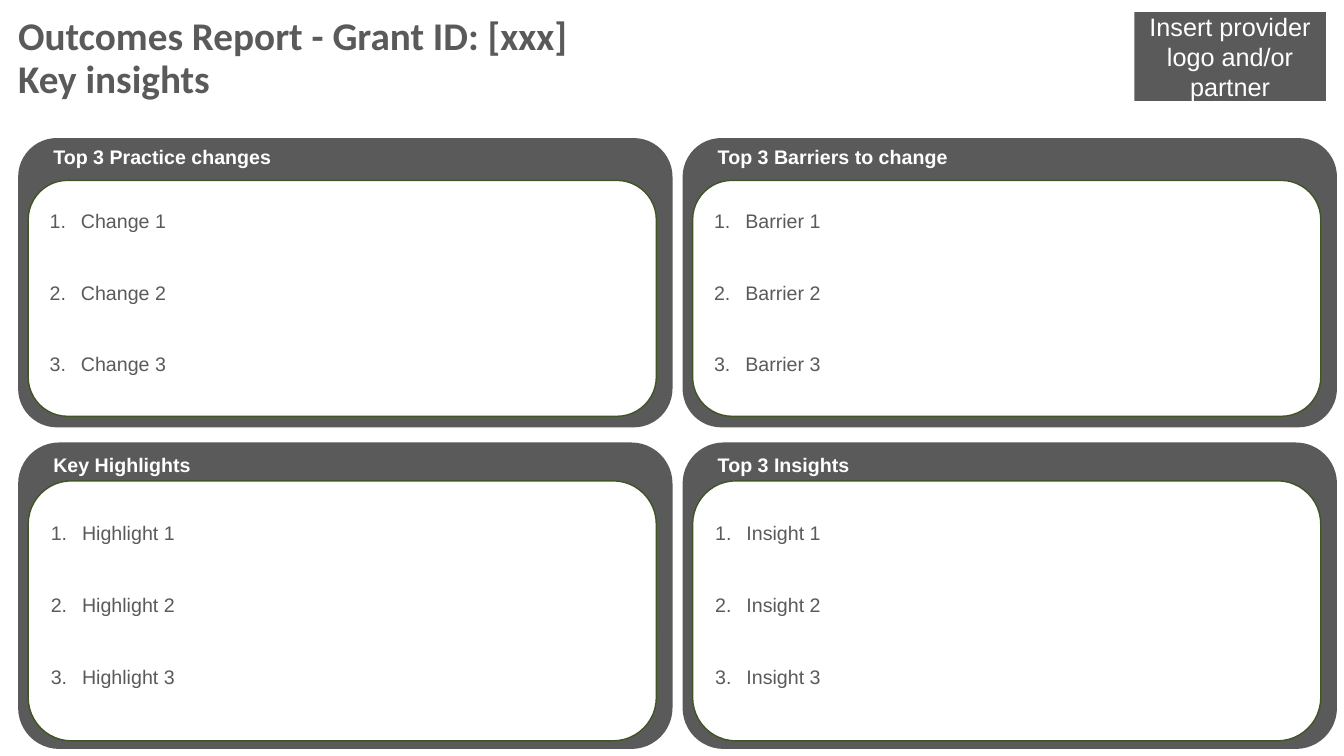
from lxml import etree
from pptx import Presentation
from pptx.dml.color import RGBColor
from pptx.enum.shapes import MSO_SHAPE
from pptx.enum.text import MSO_ANCHOR, MSO_AUTO_SIZE, PP_ALIGN
from pptx.oxml.ns import qn
from pptx.util import Inches, Pt

RECT, ROUNDED = MSO_SHAPE.RECTANGLE, MSO_SHAPE.ROUNDED_RECTANGLE
MIDDLE, BOTTOM = MSO_ANCHOR.MIDDLE, MSO_ANCHOR.BOTTOM
LEFT, CENTER = PP_ALIGN.LEFT, PP_ALIGN.CENTER

TITLE = "Outcomes Report - Grant ID: [xxx]\vKey insights"
LOGO_NOTE = "Insert provider logo and/or partner"
PANELS = [  # one inner list per row of the grid
    [("Top 3 Practice changes", ["Change 1", "Change 2", "Change 3"]),
     ("Top 3 Barriers to change", ["Barrier 1", "Barrier 2", "Barrier 3"])],
    [("Key Highlights", ["Highlight 1", "Highlight 2", "Highlight 3"]),
     ("Top 3 Insights", ["Insight 1", "Insight 2", "Insight 3"])],
]
COLORS = {"grey": "595A59", "white": "FFFFFF", "outline": "405524"}

# Grid, in inches
GRID_LEFT, COLUMN_PITCH, PANEL_WIDTH = 0.18, 6.59, 6.49
CARD_INDENT, CARD_WIDTH = 0.1, 6.23
HEADING_INDENT, HEADING_WIDTH, HEADING_HEIGHT = 0.25, 5.72, 0.34
ROWS = [
    {"panel": (1.37, 2.87), "card": (1.79, 2.34), "heading": 1.38},
    {"panel": (4.39, 3.04), "card": (4.77, 2.58), "heading": 4.44},
]
NUMBER_INDENT = 0.31
ITEM_GAP = 34.5  # points


def color(name):
    return RGBColor.from_string(COLORS[name])


def style(paragraph, size, ink, font="Arial", bold=False, align=LEFT):
    paragraph.alignment = align
    for run in paragraph.runs:
        run.font.name, run.font.size, run.font.bold = font, Pt(size), bold
        run.font.color.rgb = color(ink)


def add_block(slide, kind, box, fill, outline=None):
    block = slide.shapes.add_shape(kind, *map(Inches, box))
    block.shadow.inherit = False
    block.fill.solid()
    block.fill.fore_color.rgb = color(fill)
    if outline:
        block.line.color.rgb = color(outline)
        block.line.width = Pt(1)
    else:
        block.line.fill.background()
    return block


def number(paragraph):
    """Give the paragraph an automatic number with a hanging indent."""
    properties = paragraph._p.get_or_add_pPr()
    properties.set("marL", str(Inches(NUMBER_INDENT)))
    properties.set("indent", str(-Inches(NUMBER_INDENT)))
    etree.SubElement(properties, qn("a:buFont"), typeface="+mj-lt")
    etree.SubElement(properties, qn("a:buAutoNum"), type="arabicPeriod")


def add_panel(slide, left, row, heading, items):
    top, height = row["panel"]
    panel = add_block(slide, ROUNDED, (left, top, PANEL_WIDTH, height), "grey")
    panel.adjustments[0] = 0.134

    top, height = row["card"]
    card = add_block(slide, ROUNDED, (left + CARD_INDENT, top, CARD_WIDTH, height),
                     "white", "outline")
    frame = card.text_frame
    frame.vertical_anchor = MIDDLE
    frame.margin_bottom = Inches(0.17)
    frame.text = "\n".join(items)
    for position, item in enumerate(frame.paragraphs):
        style(item, 14, "grey")
        item.space_before = Pt(ITEM_GAP if position else 0)
        number(item)

    label = slide.shapes.add_textbox(
        Inches(left + HEADING_INDENT), Inches(row["heading"]),
        Inches(HEADING_WIDTH), Inches(HEADING_HEIGHT))
    frame = label.text_frame
    frame.word_wrap = True
    frame.vertical_anchor = BOTTOM
    frame.text = heading
    style(frame.paragraphs[0], 14, "white", bold=True)


def add_title(slide):
    title = slide.shapes.title
    title.left, title.top, title.width, title.height = map(
        Inches, (GRID_LEFT, -0.15, 10.95, 1.48))
    frame = title.text_frame
    frame.margin_left = frame.margin_right = 0
    frame.margin_top = frame.margin_bottom = 0
    frame.word_wrap = True
    frame.auto_size = MSO_AUTO_SIZE.NONE
    frame.vertical_anchor = MIDDLE
    frame.text = TITLE
    style(frame.paragraphs[0], 28, "grey", font="Calibri", bold=True)
    frame.paragraphs[0].line_spacing = 0.9


def main():
    deck = Presentation()
    deck.slide_width, deck.slide_height = Inches(13.33), Inches(7.5)
    slide = deck.slides.add_slide(deck.slide_layouts[5])

    add_title(slide)
    logo = add_block(slide, RECT, (11.25, 0.12, 1.9, 0.88), "grey")
    logo.text_frame.vertical_anchor = MIDDLE
    logo.text_frame.text = LOGO_NOTE
    style(logo.text_frame.paragraphs[0], 18, "white", align=CENTER)

    for row, panels in zip(ROWS, PANELS):
        for column, (heading, items) in enumerate(panels):
            add_panel(slide, GRID_LEFT + column * COLUMN_PITCH, row, heading, items)

    deck.save("out.pptx")


if __name__ == "__main__":
    main()
